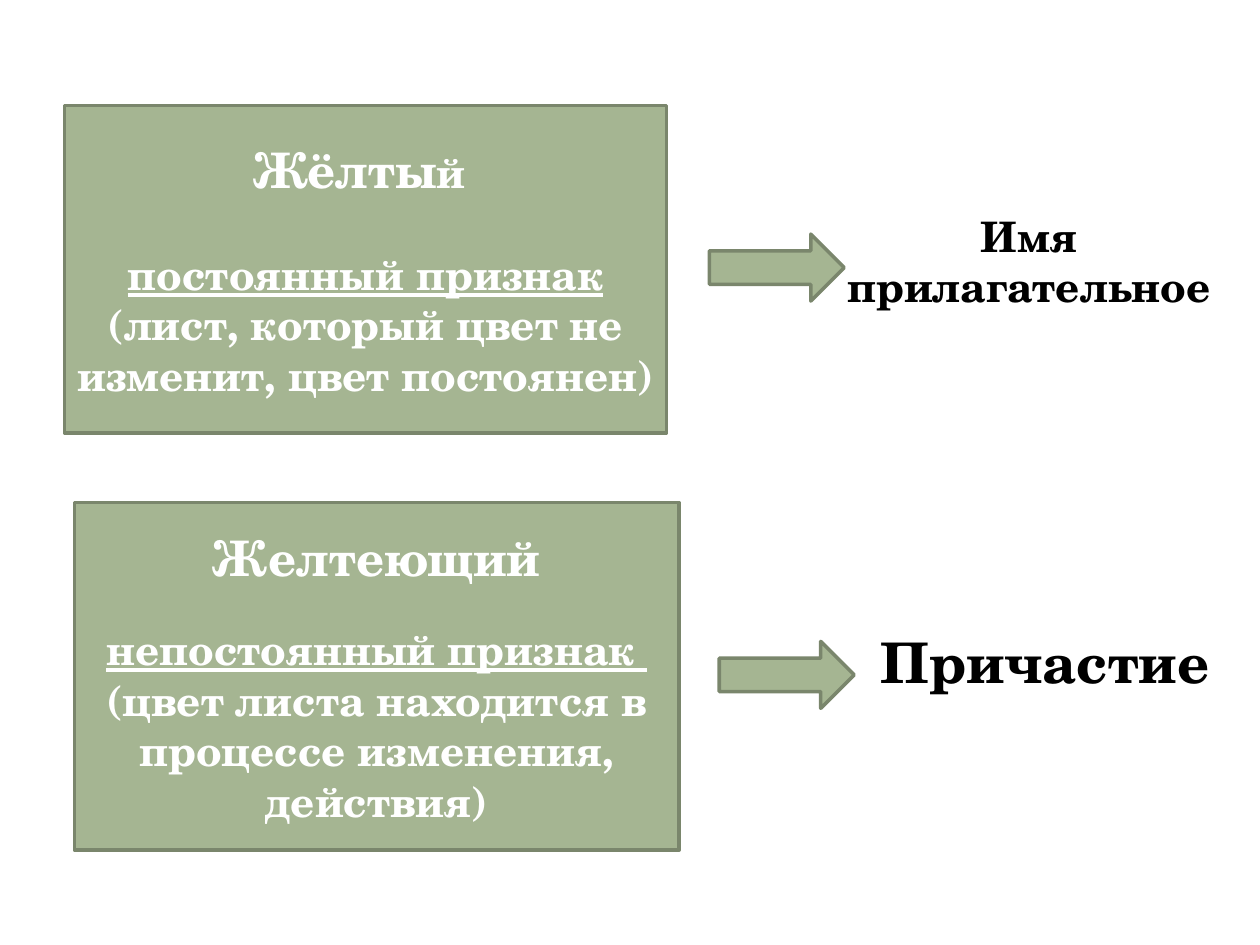
from dataclasses import dataclass

from pptx import Presentation
from pptx.dml.color import RGBColor as Color
from pptx.enum.shapes import MSO_SHAPE as Shape
from pptx.enum.text import MSO_ANCHOR as Anchor, MSO_AUTO_SIZE as AutoSize, PP_ALIGN as Align
from pptx.util import Cm, Pt


@dataclass(frozen=True)
class Theme:
    font: str = "TeX Gyre Schola"
    fill: Color = Color(0xA5, 0xB5, 0x92)
    outline: Color = Color(0x7A, 0x86, 0x6C)
    light: Color = Color(0xFF, 0xFF, 0xFF)
    dark: Color = Color(0x00, 0x00, 0x00)
    line: int = 2
    body: int = 24
    word: int = 28
    label: int = 32


THEME = Theme()


def add_span(para, text, size=THEME.body, color=THEME.light, underline=False):
    span = para.add_run()
    span.text = text
    font = span.font
    font.name, font.size, font.bold = THEME.font, Pt(size), True
    font.color.rgb = color
    font.underline = underline


def add_para(frame, spans, first=False, gap=0):
    para = frame.paragraphs[0] if first else frame.add_paragraph()
    para.alignment = Align.CENTER
    para.space_before = Pt(gap)
    for text, style in spans:
        add_span(para, text, **style)


def add_block(page, kind, left, top, width, height):
    block = page.shapes.add_shape(kind, Cm(left), Cm(top), Cm(width), Cm(height))
    block.shadow.inherit = False
    block.fill.solid()
    block.fill.fore_color.rgb = THEME.fill
    block.line.color.rgb = THEME.outline
    block.line.width = Pt(THEME.line)
    return block


def add_card(page, place, word, features, gap):
    frame = add_block(page, Shape.RECTANGLE, *place).text_frame
    frame.word_wrap = True
    frame.vertical_anchor = Anchor.MIDDLE
    add_para(frame, word, first=True)
    for number, spans in enumerate(features):
        add_para(frame, spans, gap=0 if number else gap)


def add_arrow(page, left, top):
    add_block(page, Shape.RIGHT_ARROW, left, top, 2.72, 1.35)


def add_label(page, place, text, size, wrap):
    box = page.shapes.add_textbox(*map(Cm, place))
    frame = box.text_frame
    frame.word_wrap = wrap
    frame.auto_size = AutoSize.SHAPE_TO_FIT_TEXT
    add_para(frame, [(text, dict(size=size, color=THEME.dark))], first=True)


def main():
    deck = Presentation()
    deck.slide_width, deck.slide_height = Cm(25.4), Cm(19.05)
    page = deck.slides.add_slide(deck.slide_layouts[6])
    heading, underlined = dict(size=THEME.word), dict(underline=True)

    add_card(
        page, (1.3, 2.13, 12.14, 6.6),
        [("Жёлты", heading), ("й ", {})],
        [[("постоянный признак ", underlined),
          ("(лист, который цвет не изменит, цвет постоянен) ", {})]],
        gap=28.8,
    )
    add_card(
        page, (1.5, 10.13, 12.19, 7.01),
        [("Желтеющий", heading)],
        [[("непостоянный признак ", underlined)],
         [("(цвет листа находится в процессе изменения, действия)", {})]],
        gap=21.6,
    )
    add_arrow(page, 14.3, 4.72)
    add_arrow(page, 14.5, 12.93)
    add_label(page, (16.69, 4.11, 8.1, 2.31), "Имя прилагательное", THEME.body, wrap=True)
    add_label(page, (17.5, 12.52, 7.14, 1.63), "Причастие", THEME.label, wrap=False)
    deck.save("out.pptx")


if __name__ == "__main__":
    main()
